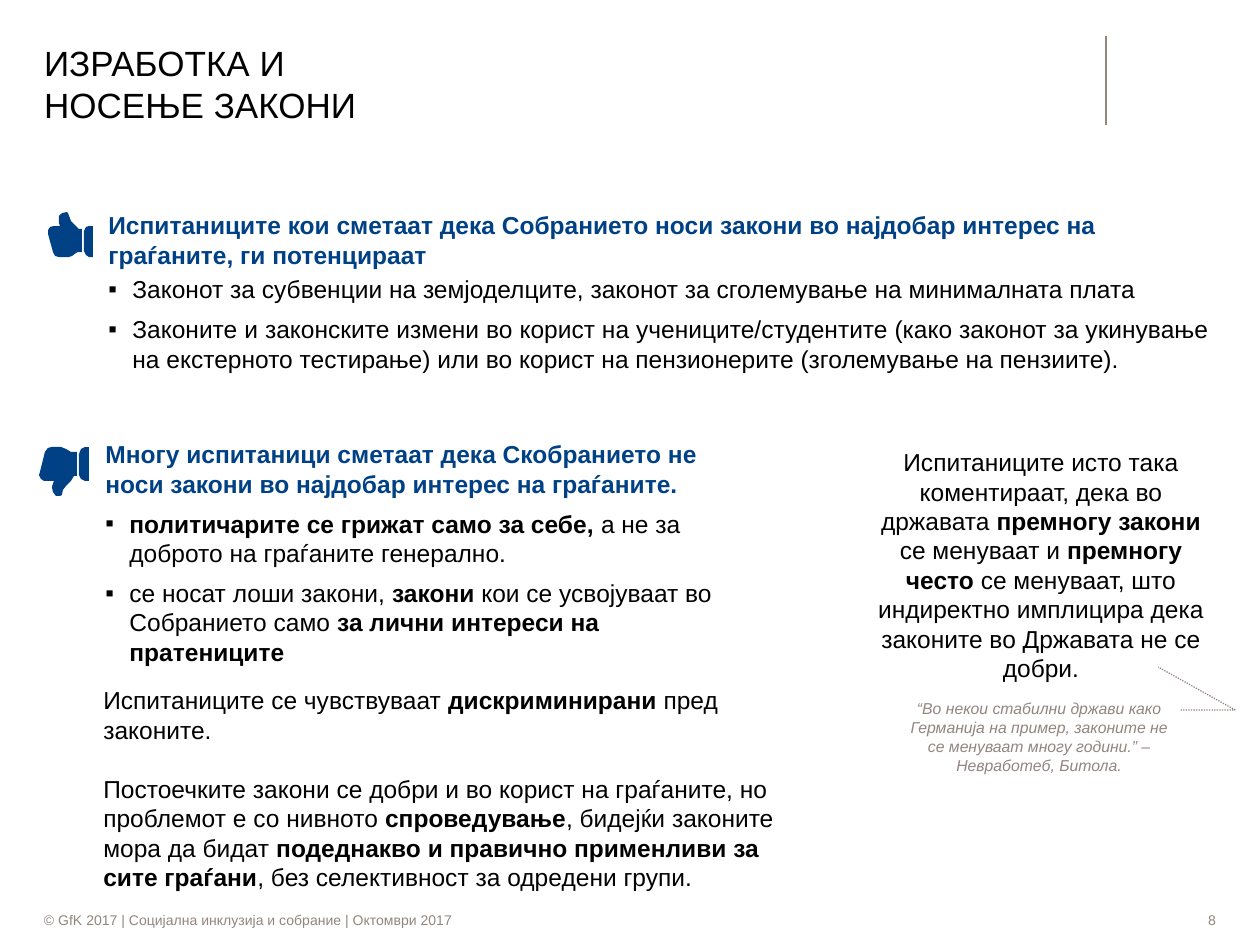
from dataclasses import dataclass

from lxml.etree import SubElement
from pptx import Presentation
from pptx.dml.color import RGBColor
from pptx.enum.dml import MSO_LINE
from pptx.enum.shapes import MSO_CONNECTOR, MSO_SHAPE
from pptx.enum.text import MSO_ANCHOR as Anchor, MSO_AUTO_SIZE, PP_ALIGN as Align
from pptx.oxml.ns import qn
from pptx.util import Inches, Pt

EMU_PER_PX = Inches(1) / 126
FONT = "Arial"
COLORS = {"text": "000000", "accent": "004186", "muted": "928580", "paper": "FFFFFF"}


@dataclass
class Box:
    left: int
    top: int
    width: int
    height: int


@dataclass
class Para:
    """One paragraph; parts between ** marks are bold."""
    text: str
    color: str = "text"
    size: int = 14
    before: int = 0
    bullet: bool = False
    align: Align = Align.LEFT
    indent: int = 0
    italic: bool = False


def px(value: int) -> int:
    return round(value * EMU_PER_PX)


def color(name: str) -> RGBColor:
    return RGBColor.from_string(COLORS[name])


def place(shape, box: Box) -> None:
    shape.left, shape.top = px(box.left), px(box.top)
    shape.width, shape.height = px(box.width), px(box.height)


def write(text_frame, paras: list[Para], anchor=Anchor.TOP, inset: bool = True) -> None:
    text_frame.word_wrap = True
    text_frame.auto_size = MSO_AUTO_SIZE.NONE
    text_frame.vertical_anchor = anchor
    if not inset:
        text_frame.margin_left = text_frame.margin_right = 0
        text_frame.margin_top = text_frame.margin_bottom = 0
    for index, para in enumerate(paras):
        paragraph = text_frame.add_paragraph() if index else text_frame.paragraphs[0]
        paragraph.alignment = para.align
        paragraph.space_before = Pt(para.before)
        properties = paragraph._p.get_or_add_pPr()
        if para.bullet:
            properties.set("marL", str(px(24)))
            properties.set("indent", str(-px(24)))
            SubElement(properties, qn("a:buFont"), typeface=FONT)
            SubElement(properties, qn("a:buChar"), char="▪")
        elif para.indent:
            properties.set("marL", str(px(para.indent)))
        for part_index, part in enumerate(para.text.split("**")):
            if not part:
                continue
            run = paragraph.add_run()
            run.text = part
            run.font.name = FONT
            run.font.size = Pt(para.size)
            run.font.bold = part_index % 2 == 1
            run.font.italic = para.italic
            run.font.color.rgb = color(para.color)


def add_text(slide, box: Box, paras: list[Para]) -> None:
    shape = slide.shapes.add_textbox(0, 0, 0, 0)
    place(shape, box)
    write(shape.text_frame, paras)


def add_filled(slide, kind, box: Box, paras: list[Para], inset: bool):
    shape = slide.shapes.add_shape(kind, 0, 0, 0, 0)
    place(shape, box)
    shape.shadow.inherit = False
    shape.fill.solid()
    shape.fill.fore_color.rgb = color("paper")
    shape.line.fill.background()
    write(shape.text_frame, paras, Anchor.MIDDLE, inset)
    return shape


def add_outline(slide, points: list[tuple[int, int]]):
    builder = slide.shapes.build_freeform(*points[0], scale=EMU_PER_PX)
    builder.add_line_segments(points[1:], close=True)
    shape = builder.convert_to_shape()
    shape.shadow.inherit = False
    shape.fill.solid()
    shape.fill.fore_color.rgb = color("accent")
    shape.line.fill.background()


TITLE = "ИЗРАБОТКА И \vНОСЕЊЕ ЗАКОНИ"

FOOTERS = [
    (Box(44, 910, 973, 20),
     Para("© GfK 2017 | Социјална инклузија и собрание | Октомври 2017", "muted", 8)),
    (Box(1037, 910, 179, 20), Para("8", "muted", 8, align=Align.RIGHT)),
]

TEXTS = [
    (Box(96, 204, 1126, 178), [
        Para("**Испитаниците кои сметаат дека Собранието носи закони во најдобар "
             "интерес на граѓаните, ги потенцираат**", "accent"),
        Para("Законот за субвенции на земјоделците, законот за сголемување на "
             "минималната плата", before=3, bullet=True),
        Para("Законите и законските измени во корист на учениците/студентите (како "
             "законот за укинување на екстерното тестирање) или во корист на "
             "пензионерите (зголемување на пензиите).",
             before=6, bullet=True, align=Align.JUSTIFY),
    ]),
    (Box(93, 433, 662, 386), [
        Para("**Многу испитаници сметаат дека Скобранието не носи закони во најдобар "
             "интерес на граѓаните.**", "accent"),
        Para("**политичарите се грижат само за себе, **а не за доброто на граѓаните "
             "генерално.", before=6, bullet=True),
        Para("се носат лоши закони, **закони **кои се усвојуваат во Собранието само "
             "**за лични интереси на пратениците**", before=6, bullet=True),
    ]),
    (Box(859, 441, 358, 251), [
        Para("Испитаниците исто така коментираат, дека во државата **премногу закони "
             "**се менуваат и **премногу често** се менуваат, што индиректно "
             "имплицира дека законите во Државата не се добри.",
             align=Align.CENTER, indent=6),
    ]),
    (Box(91, 679, 708, 221), [
        Para("Испитаниците се чувствуваат **дискриминирани** пред законите."),
        Para("Постоечките закони се добри и во корист на граѓаните, но проблемот е со "
             "нивното **спроведување**, бидејќи законите мора да бидат **подеднакво и "
             "правично применливи за сите граѓани**, без селективност за одредени "
             "групи.", before=17),
    ]),
]

QUOTE = Para("“Во некои стабилни држави како Германија на пример, законите не се "
             "менуваат многу години.” – Невработеб, Битола.",
             "muted", 9, align=Align.CENTER, italic=True)
QUOTE_LEADER = [0.214, 1.002, 0.214, 1.195, -0.247, 0.923]

# Cuff and hand of each thumb
THUMBS = [
    [(93, 257), (89, 257), (86, 255), (84, 251), (84, 231), (86, 227), (89, 226), (93, 226)],
    [(82, 252), (78, 252), (76, 253), (72, 256), (69, 257), (59, 257), (55, 256),
     (53, 252), (48, 234), (48, 230), (50, 227), (54, 226), (60, 226), (59, 223),
     (59, 216), (62, 213), (67, 212), (68, 213), (71, 221), (76, 226), (79, 229), (82, 229)],
    [(89, 481), (85, 481), (81, 479), (79, 475), (79, 454), (81, 449), (85, 447), (89, 447)],
    [(77, 476), (74, 476), (71, 481), (66, 486), (63, 490), (62, 495), (60, 496),
     (56, 496), (53, 492), (52, 487), (54, 481), (44, 481), (41, 479), (39, 475),
     (40, 472), (45, 452), (48, 448), (52, 447), (61, 447), (66, 449), (71, 452), (77, 452)],
]


def main() -> None:
    presentation = Presentation()
    presentation.slide_width, presentation.slide_height = px(1260), px(945)
    slide = presentation.slides.add_slide(presentation.slide_layouts[5])

    # Header rule and footer
    rule = slide.shapes.add_connector(
        MSO_CONNECTOR.STRAIGHT, px(1106), px(36), px(1106), px(125))
    rule.line.color.rgb = color("muted")
    rule.line.width = Pt(0.75)
    SubElement(rule._element.spPr, qn("a:effectLst"))
    for box, para in FOOTERS:
        add_filled(slide, MSO_SHAPE.RECTANGLE, box, [para], inset=False)

    # Title
    title = slide.shapes.title
    place(title, Box(44, 37, 704, 89))
    title.text_frame.text = TITLE
    write_title = title.text_frame
    write_title.word_wrap = True
    write_title.auto_size = MSO_AUTO_SIZE.NONE
    write_title.vertical_anchor = Anchor.BOTTOM
    write_title.margin_left = write_title.margin_right = 0
    write_title.margin_top = write_title.margin_bottom = 0
    paragraph = write_title.paragraphs[0]
    paragraph.alignment = Align.LEFT
    for run in paragraph.runs:
        run.font.name, run.font.size = FONT, Pt(20)
        run.font.color.rgb = color("text")

    # Body texts, quote callout and thumbs
    for box, paras in TEXTS:
        add_text(slide, box, paras)
    callout = add_filled(slide, MSO_SHAPE.LINE_CALLOUT_2_NO_BORDER,
                         Box(898, 690, 282, 93), [QUOTE], inset=True)
    for index, value in enumerate(QUOTE_LEADER):
        callout.adjustments[index] = value
    callout.line.color.rgb = color("muted")
    callout.line.width = Pt(0.75)
    callout.line.dash_style = MSO_LINE.ROUND_DOT
    for points in THUMBS:
        add_outline(slide, points)

    presentation.save("out.pptx")


if __name__ == "__main__":
    main()
